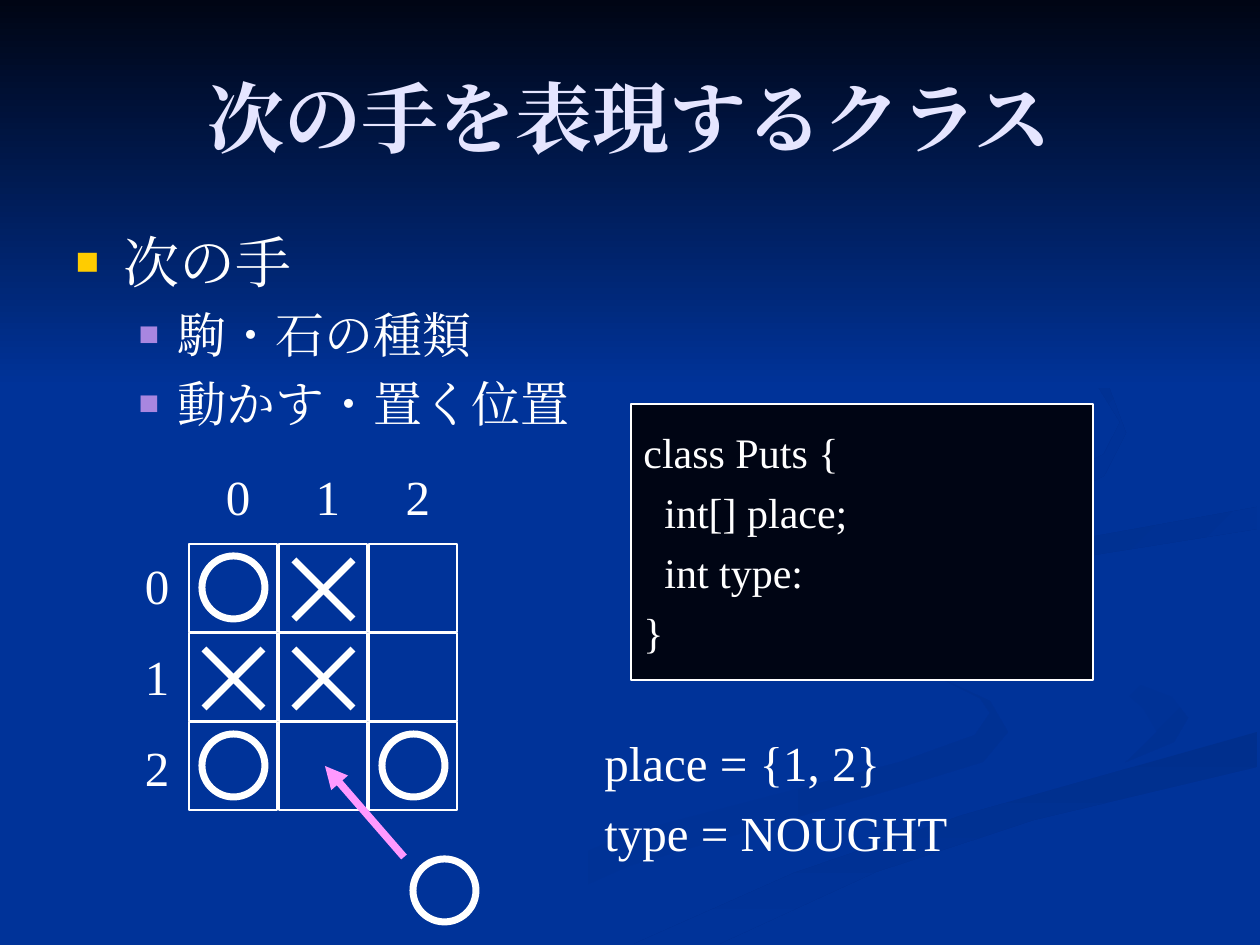
from dataclasses import dataclass

from lxml.etree import SubElement
from pptx import Presentation
from pptx.dml.color import RGBColor
from pptx.enum.shapes import MSO_CONNECTOR, MSO_SHAPE
from pptx.enum.text import MSO_ANCHOR, MSO_AUTO_SIZE, PP_ALIGN
from pptx.oxml.ns import qn
from pptx.util import Pt

PX = 914400 / 126
FONT = "Times New Roman"
BLUE = RGBColor(0x00, 0x33, 0x99)
DEEP = RGBColor(0x00, 0x31, 0x93)
SHADE = RGBColor(0x00, 0x2F, 0x8D)
NIGHT = RGBColor(0x00, 0x05, 0x14)
WHITE = RGBColor(0xFF, 0xFF, 0xFF)
LAVENDER = RGBColor(0xE5, 0xE5, 0xFF)
GOLD = RGBColor(0xFF, 0xCC, 0x00)
PURPLE = RGBColor(0xA8, 0x86, 0xE0)
PINK = RGBColor(0xFF, 0x99, 0xFF)


@dataclass
class Swoosh:
    start: RGBColor
    end: RGBColor
    angle: int
    points: list


@dataclass
class Bullet:
    text: str
    level: int
    size: int
    margin: int
    hang: int
    color: RGBColor


@dataclass
class Label:
    text: str
    x: int
    y: int


SWOOSHES = [
    Swoosh(BLUE, DEEP, 0, [
        (940, 678), (980, 698), (990, 713), (975, 735), (900, 762), (629, 833), (378, 944),
        (455, 944), (629, 866), (908, 785), (983, 762), (1008, 732), (990, 701)]),
    Swoosh(BLUE, DEEP, 45, [
        (1096, 668), (1143, 708), (1157, 732), (1126, 762), (1174, 742), (1188, 718), (1172, 697)]),
    Swoosh(SHADE, BLUE, 90, [
        (634, 944), (719, 944), (876, 872), (1034, 820), (1257, 767), (1257, 732), (963, 815), (794, 873)]),
    Swoosh(SHADE, BLUE, 45, [
        (984, 580), (1016, 614), (1023, 580), (1082, 557), (1257, 529), (1257, 507), (1034, 547)]),
    Swoosh(SHADE, BLUE, 45, [
        (861, 542), (1039, 507), (1104, 476), (1126, 433), (1109, 387), (1062, 346), (960, 294),
        (1092, 377), (1120, 422), (1104, 454), (1061, 476), (788, 537), (731, 568), (784, 630), (764, 569)]),
]
BULLETS = [
    Bullet("次の手", 0, 32, 48, 48, GOLD),
    Bullet("駒・石の種類", 1, 28, 102, 39, PURPLE),
    Bullet("動かす・置く位置", 1, 28, 102, 39, PURPLE),
]
LABELS = [Label(str(i), 213 + 90 * i, 460) for i in range(3)]
LABELS += [Label(str(i), 132, 549 + 91 * i) for i in range(3)]
BOARD = ["OX ", "XX ", "O O"]


def px(n: int) -> int:
    """Turn pixels into EMU."""
    return round(n * PX)


def box(x: int, y: int, w: int, h: int) -> tuple:
    """Return a frame in EMU."""
    return px(x), px(y), px(w), px(h)


def place(sp, x: int, y: int, w: int, h: int) -> None:
    """Move and size a placeholder."""
    sp.left, sp.top, sp.width, sp.height = box(x, y, w, h)


def style(p, size: int, color: RGBColor = WHITE, bold: bool = False) -> None:
    """Format every run of a paragraph."""
    for r in p.runs:
        r.font.name, r.font.size, r.font.bold = FONT, Pt(size), bold
        r.font.color.rgb = color
        SubElement(r._r.get_or_add_rPr(), qn("a:ea"), typeface=FONT)


def write(tf, text: str, size: int, align=PP_ALIGN.LEFT) -> None:
    """Fill a frame with evenly spaced lines."""
    tf.text = text
    for p in tf.paragraphs:
        p.alignment, p.space_before = align, Pt(round(size * 0.23, 1))
        style(p, size)


def shade(sp, start: RGBColor, end: RGBColor, angle: int) -> None:
    """Give a shape a two-colour gradient without a line."""
    sp.shadow.inherit = False
    sp.line.fill.background()
    sp.fill.gradient()
    sp.fill.gradient_angle = (360 - angle) % 360
    for stop, color, position in zip(sp.fill.gradient_stops, (start, end), (0, 1)):
        stop.color.rgb, stop.position = color, position


def add_backdrop(s) -> None:
    """Draw the swooshes and the dark sky over them."""
    for item in SWOOSHES:
        fb = s.shapes.build_freeform(*item.points[0], scale=PX)
        fb.add_line_segments(item.points[1:], close=True)
        shade(fb.convert_to_shape(), item.start, item.end, item.angle)
    sky = s.shapes.add_shape(MSO_SHAPE.RECTANGLE, *box(0, 0, 1260, 388))
    shade(sky, NIGHT, BLUE, 90)


def add_outline(s, kind, x: int, y: int, w: int, h: int, width: float):
    """Draw an unfilled white shape."""
    sp = s.shapes.add_shape(kind, *box(x, y, w, h))
    sp.shadow.inherit = False
    sp.fill.background()
    sp.line.color.rgb, sp.line.width = WHITE, Pt(width)
    return sp


def add_line(s, x1: int, y1: int, x2: int, y2: int, color: RGBColor, width: float):
    """Draw a straight line."""
    c = s.shapes.add_connector(MSO_CONNECTOR.STRAIGHT, *box(x1, y1, x2, y2))
    c.line.color.rgb, c.line.width = color, Pt(width)
    SubElement(c.element.spPr, qn("a:effectLst"))
    return c


def add_nought(s, x: int, y: int) -> None:
    """Draw a nought."""
    add_outline(s, MSO_SHAPE.OVAL, x, y, 63, 63, 4)


def add_cross(s, x: int, y: int) -> None:
    """Draw a cross."""
    add_line(s, x + 59, y, x, y + 59, WHITE, 4)
    add_line(s, x + 59, y + 59, x, y, WHITE, 4)


def add_text(s, text: str, x: int, y: int, w: int, h: int, align) -> None:
    """Add an unwrapped text box."""
    tf = s.shapes.add_textbox(*box(x, y, w, h)).text_frame
    tf.word_wrap, tf.auto_size = False, MSO_AUTO_SIZE.SHAPE_TO_FIT_TEXT
    write(tf, text, 28, align)


def fill_title(sp) -> None:
    """Set the heading."""
    place(sp, 63, 38, 1134, 158)
    tf = sp.text_frame
    tf.text = "次の手を表現するクラス"
    tf.auto_size, tf.vertical_anchor = MSO_AUTO_SIZE.NONE, MSO_ANCHOR.MIDDLE
    tf.paragraphs[0].alignment = PP_ALIGN.CENTER
    style(tf.paragraphs[0], 44, LAVENDER, True)


def fill_body(sp) -> None:
    """Set the bulleted list."""
    place(sp, 63, 221, 1134, 624)
    tf = sp.text_frame
    tf.text = "\n".join(b.text for b in BULLETS)
    tf.auto_size = MSO_AUTO_SIZE.NONE
    for p, b in zip(tf.paragraphs, BULLETS):
        p.level = b.level
        style(p, b.size)
        pPr = p._p.get_or_add_pPr()
        pPr.set("marL", str(px(b.margin)))
        pPr.set("indent", str(-px(b.hang)))
        SubElement(SubElement(pPr, qn("a:buClr")), qn("a:srgbClr"), val=str(b.color))
        SubElement(pPr, qn("a:buSzPct"), val="70000")
        SubElement(pPr, qn("a:buChar"), char="■")


def add_board(s) -> None:
    """Draw the grid and its marks."""
    cells = [(189 + 90 * c, 544 + 89 * r, mark) for r, row in enumerate(BOARD) for c, mark in enumerate(row)]
    for x, y, _ in cells:
        add_outline(s, MSO_SHAPE.RECTANGLE, x, y, 88, 88, 1.5)
    for x, y, mark in cells:
        if mark == "O":
            add_nought(s, x + 13, y + 12)
        elif mark == "X":
            add_cross(s, x + 15, y + 16)


def add_code(s) -> None:
    """Draw the class listing."""
    sp = add_outline(s, MSO_SHAPE.RECTANGLE, 631, 404, 462, 276, 0.75)
    sp.fill.solid()
    sp.fill.fore_color.rgb = NIGHT
    tf = sp.text_frame
    tf.word_wrap, tf.vertical_anchor = True, MSO_ANCHOR.MIDDLE
    write(tf, "class Puts {\nint[] place;\nint type:\n}", 24)
    for p in tf.paragraphs[1:3]:
        p._p.get_or_add_pPr().set("marL", str(px(21)))


def main() -> None:
    """Build the slide."""
    prs = Presentation()
    prs.slide_width, prs.slide_height = px(1260), px(945)
    s = prs.slides.add_slide(prs.slide_layouts[1])
    s.background.fill.solid()
    s.background.fill.fore_color.rgb = BLUE
    title, body = s.placeholders
    add_backdrop(s)
    for sp in (title, body):
        s.shapes.element.append(sp.element)
    fill_title(title)
    fill_body(body)
    add_board(s)
    for label in LABELS:
        add_text(s, label.text, label.x, label.y, 50, 72, PP_ALIGN.CENTER)
    add_text(s, "place = {1, 2}\ntype = NOUGHT", 592, 726, 383, 144, PP_ALIGN.LEFT)
    add_code(s)
    add_nought(s, 413, 859)
    arrow = add_line(s, 404, 857, 325, 766, PINK, 4.25)
    SubElement(arrow.element.spPr.find(qn("a:ln")), qn("a:tailEnd"), type="triangle")
    prs.save("out.pptx")


if __name__ == "__main__":
    main()
